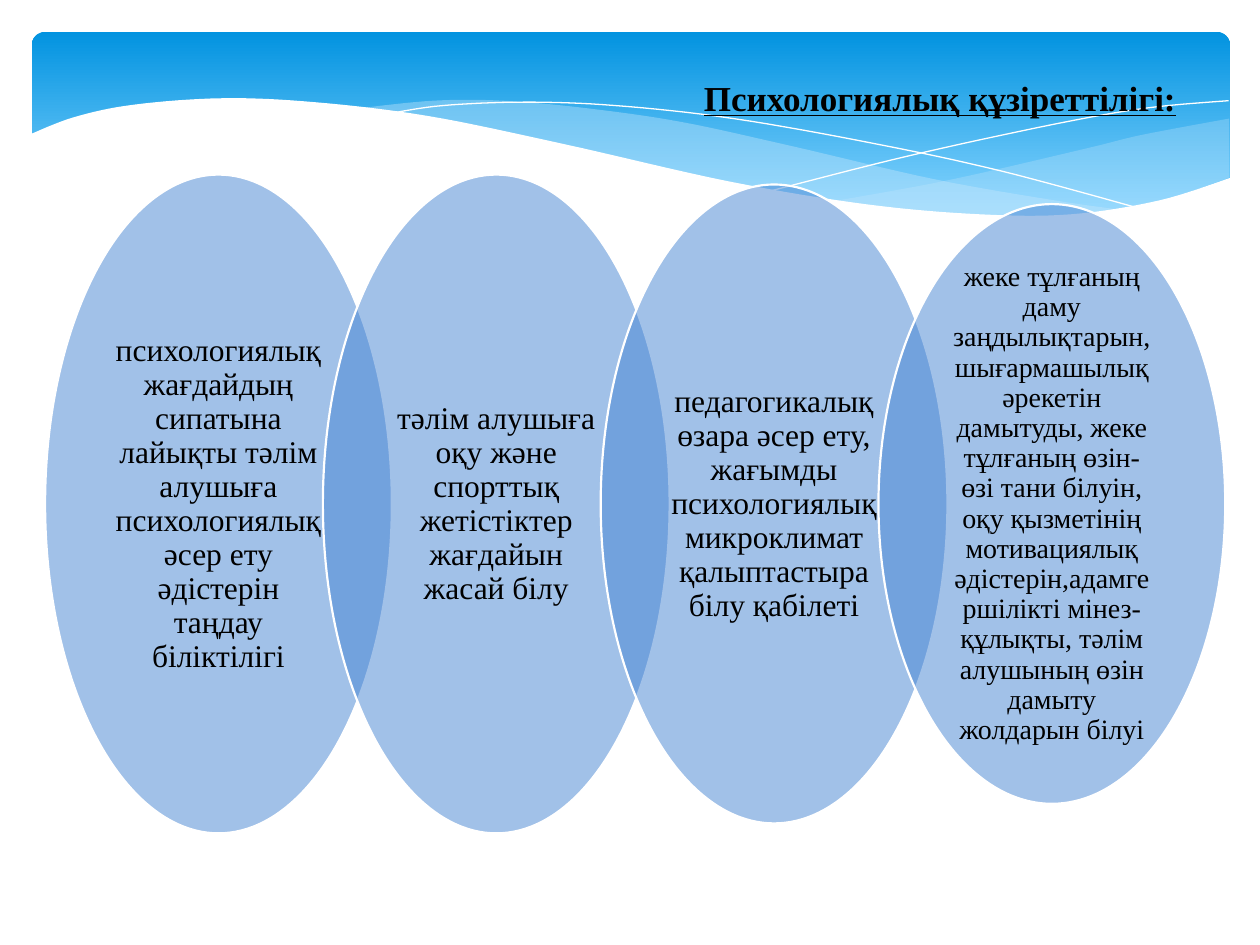
from dataclasses import dataclass
from itertools import chain

from lxml import etree
from pptx import Presentation
from pptx import util as u
from pptx.dml.color import RGBColor
from pptx.enum import shapes, text
from pptx.oxml.ns import qn

Point = tuple[float, float]
Curve = list[Point]


@dataclass(frozen=True)
class Theme:
    font: str = "Times New Roman"
    ink: str = "000000"
    white: str = "FFFFFF"
    banner_top: str = "0293E0"
    banner_bottom: str = "83D3FE"
    wave: str = "C6E7FC"
    oval: str = "4584D3"
    title_size: float = 20
    body_size: float = 18
    small_size: float = 16
    oval_line: float = 1.25


THEME = Theme()


@dataclass(frozen=True)
class Wave:
    curves: list[Curve]
    fill: str | None = None
    opacity: int = 100


@dataclass(frozen=True)
class Skill:
    wording: str
    height: float
    size: float = THEME.body_size


WAVES = [
    Wave([[(24.78, 2.39), (23.02, 2.72), (21.87, 3.0), (19.13, 3.63), (16.79, 4.06)],
          [(16.79, 4.06), (18.59, 4.27), (20.4, 4.37), (21.92, 4.34), (23.39, 4.06),
           (24.78, 3.58)]], THEME.wave, 29),
    Wave([[(22.68, 4.24), (21.26, 4.04), (18.82, 3.61), (15.98, 2.95), (13.74, 2.46),
           (11.81, 2.18), (10.13, 2.03), (8.74, 2.03), (7.26, 2.18)],
          [(7.26, 2.18), (9.19, 2.46), (11.4, 2.95), (14.38, 3.63), (16.89, 4.09),
           (19.02, 4.34), (21.03, 4.39), (22.68, 4.24)]], THEME.wave, 40),
    Wave([[(7.85, 2.29), (8.92, 2.13), (10.57, 2.06), (12.42, 2.13), (14.78, 2.39),
           (17.65, 2.9), (20.19, 3.45), (23.04, 4.22)]]),
    Wave([[(15.57, 3.84), (18.29, 3.15), (21.23, 2.51), (23.11, 2.18), (24.77, 2.03)]]),
    Wave([[(24.82, 3.58), (23.37, 4.04), (21.59, 4.32), (19.76, 4.32), (17.48, 4.12),
           (14.71, 3.66), (11.35, 2.9), (8.64, 2.34), (6.35, 2.06), (4.49, 1.98),
           (2.7, 2.11), (1.5, 2.36), (0.58, 2.72)],
          [(0.58, 5.69), (24.82, 5.69)]], THEME.white),
]

SKILLS = [
    Skill("психологиялық жағдайдың сипатына лайықты тәлім алушыға психологиялық "
          "әсер ету әдістерін таңдау біліктілігі", 13.28),
    Skill("тәлім алушыға оқу және спорттық жетістіктер жағдайын жасай білу", 13.28),
    Skill("педагогикалық өзара әсер ету, жағымды психологиялық микроклимат "
          "қалыптастыра білу қабілеті", 12.88),
    Skill("жеке тұлғаның даму заңдылықтарын, шығармашылық әрекетін дамытуды, "
          "жеке тұлғаның өзін-өзі тани білуін, оқу қызметінің мотивациялық "
          "әдістерін,адамгершілікті мінез-құлықты, тәлім алушының өзін дамыту "
          "жолдарын білуі", 12.09, THEME.small_size),
]
OVAL_LEFT, OVAL_STEP, OVAL_WIDTH, OVAL_MIDDLE = 0.91, 5.6, 6.99, 10.16


def smooth(knots: Curve, steps: int = 8) -> Curve:
    if len(knots) < 3:
        return knots
    padded = [knots[0], *knots, knots[-1]]
    points = [knots[0]]
    for a, b, c, d in zip(padded, padded[1:], padded[2:], padded[3:]):
        for step in range(1, steps + 1):
            t = step / steps
            x, y = (0.5 * (2 * q + (r - p) * t + (2 * p - 5 * q + 4 * r - s) * t ** 2
                           + (3 * q - p - 3 * r + s) * t ** 3)
                    for p, q, r, s in zip(a, b, c, d))
            points.append((x, y))
    return points


def paint(shape, color: str, opacity: int = 100) -> None:
    shape.fill.solid()
    shape.fill.fore_color.rgb = RGBColor.from_string(color)
    if opacity < 100:
        node = shape.fill._xPr.find(qn("a:solidFill"))[0]
        etree.SubElement(node, qn("a:alpha")).set("val", str(opacity * 1000))


def outline(shape, points: float) -> None:
    shape.line.color.rgb = RGBColor.from_string(THEME.white)
    shape.line.width = u.Pt(points)


def write(shape, wording: str, size: float):
    shape.text_frame.text = wording
    paragraph = shape.text_frame.paragraphs[0]
    font = paragraph.runs[0].font
    font.name = THEME.font
    font.size = u.Pt(size)
    font.color.rgb = RGBColor.from_string(THEME.ink)
    return paragraph


def draw_banner(slide) -> None:
    shape = slide.shapes.add_shape(shapes.MSO_SHAPE.ROUNDED_RECTANGLE,
                                   u.Cm(0.64), u.Cm(0.64), u.Cm(24.16), u.Cm(3.96))
    shape.adjustments[0] = 0.07
    shape.shadow.inherit = False
    shape.line.fill.background()
    shape.fill.gradient()
    shape.fill.gradient_angle = 270
    stops = shape.fill.gradient_stops
    for stop, color, position in zip(stops, (THEME.banner_top, THEME.banner_bottom), (0, 0.9)):
        stop.color.rgb = RGBColor.from_string(color)
        stop.position = position


def draw_wave(slide, wave: Wave) -> None:
    points = [(u.Cm(x), u.Cm(y)) for x, y in chain.from_iterable(map(smooth, wave.curves))]
    builder = slide.shapes.build_freeform(*points[0])
    builder.add_line_segments(points[1:], close=wave.fill is not None)
    shape = builder.convert_to_shape()
    shape.shadow.inherit = False
    if wave.fill:
        paint(shape, wave.fill, wave.opacity)
        shape.line.fill.background()
    else:
        shape.fill.background()
        outline(shape, 0)


def draw_title(slide) -> None:
    box = slide.shapes.add_textbox(u.Cm(13.94), u.Cm(1.42), u.Cm(10.11), u.Cm(1.12))
    box.text_frame.word_wrap = False
    paragraph = write(box, "Психологиялық құзіреттілігі:", THEME.title_size)
    paragraph.runs[0].font.bold = True
    paragraph.runs[0].font.underline = True


def draw_skill(slide, skill: Skill, index: int) -> None:
    shape = slide.shapes.add_shape(
        shapes.MSO_SHAPE.OVAL, u.Cm(OVAL_LEFT + index * OVAL_STEP),
        u.Cm(OVAL_MIDDLE - skill.height / 2), u.Cm(OVAL_WIDTH), u.Cm(skill.height))
    shape.shadow.inherit = False
    paint(shape, THEME.oval, 50)
    outline(shape, THEME.oval_line)
    frame = shape.text_frame
    frame.word_wrap = True
    frame.vertical_anchor = text.MSO_ANCHOR.MIDDLE
    frame.margin_left = frame.margin_right = u.Cm(0.38)
    frame.margin_top = frame.margin_bottom = u.Cm(0.08)
    paragraph = write(shape, skill.wording, skill.size)
    paragraph.alignment = text.PP_ALIGN.CENTER
    paragraph.line_spacing = 0.9


def main() -> None:
    presentation = Presentation()
    presentation.slide_width, presentation.slide_height = u.Cm(25.4), u.Cm(19.05)
    slide = presentation.slides.add_slide(presentation.slide_layouts[6])
    draw_banner(slide)
    for wave in WAVES:
        draw_wave(slide, wave)
    draw_title(slide)
    for index, skill in enumerate(SKILLS):
        draw_skill(slide, skill, index)
    presentation.save("out.pptx")


if __name__ == "__main__":
    main()
